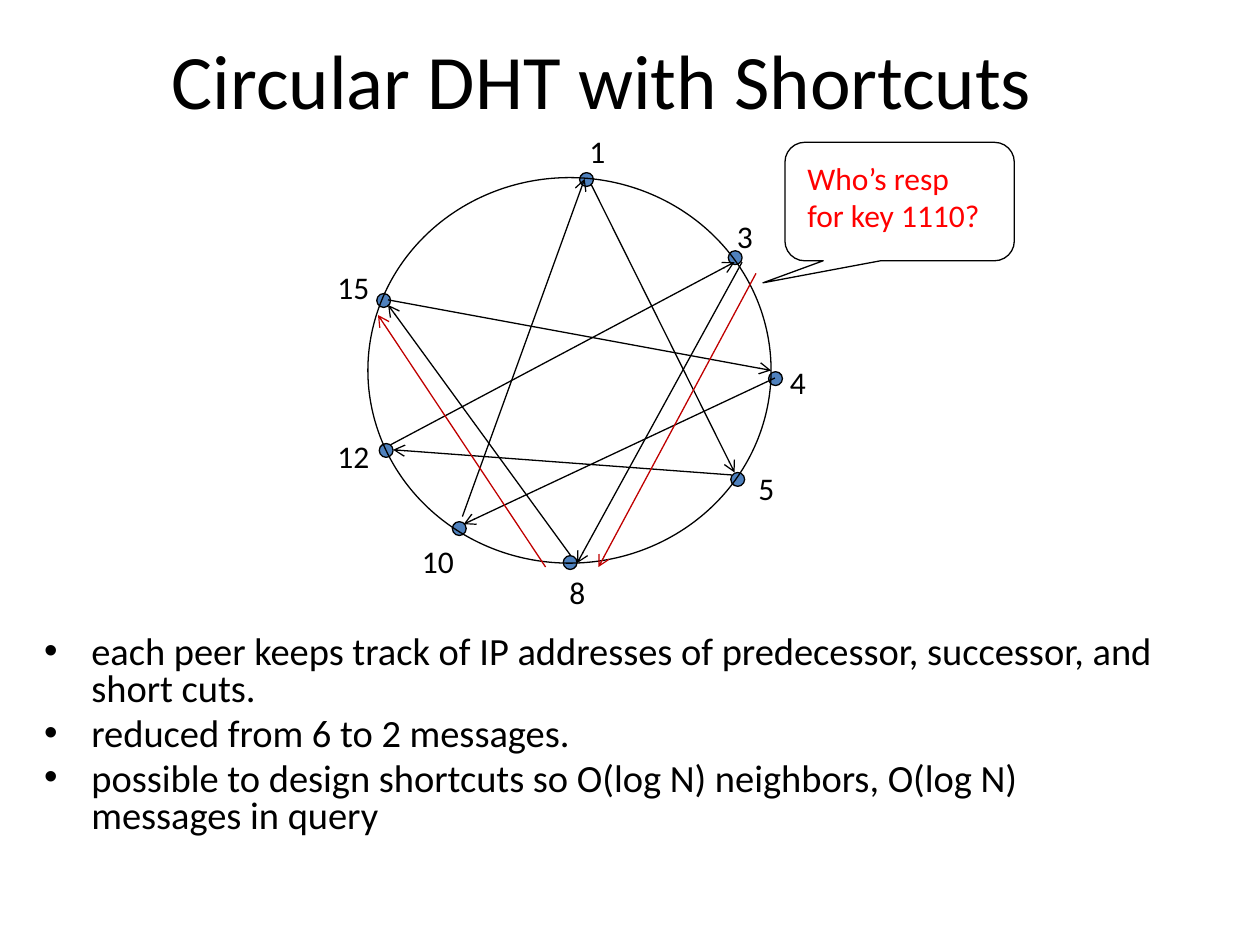
from dataclasses import dataclass

from lxml import etree
from pptx import Presentation
from pptx.dml.color import RGBColor
from pptx.enum.shapes import MSO_CONNECTOR, MSO_SHAPE
from pptx.enum.text import MSO_ANCHOR, MSO_AUTO_SIZE, PP_ALIGN
from pptx.oxml.ns import qn
from pptx.slide import Slide
from pptx.util import Inches, Pt

OVAL = MSO_SHAPE.OVAL
CALLOUT = MSO_SHAPE.ROUNDED_RECTANGULAR_CALLOUT
STRAIGHT = MSO_CONNECTOR.STRAIGHT
BLACK, BLUE, RED, DARK_RED = "000000", "4F81BD", "FF0000", "C00000"
DOT = 0.11

# peer: (dot left, dot top, label left, label top, label width)
PEERS = {
    "1": (4.6, 1.37, 4.58, 1, 0.32),
    "3": (5.78, 1.99, 5.75, 1.67, 0.36),
    "4": (6.1, 2.95, 6.17, 2.83, 0.36),
    "5": (5.8, 3.75, 5.92, 3.67, 0.36),
    "8": (4.47, 4.41, 4.42, 4.5, 0.36),
    "10": (3.59, 4.14, 3.25, 4.25, 0.47),
    "12": (3.01, 3.52, 2.58, 3.42, 0.47),
    "15": (2.99, 2.33, 2.58, 2.08, 0.47),
}
SHORTCUTS = [
    (6.15, 3, 3.68, 4.16),
    (5.81, 3.77, 3.12, 3.57),
    (4.53, 4.41, 3.08, 2.42),
    (3.67, 4.1, 4.64, 1.42),
    (3.1, 3.53, 5.83, 2.08),
    (3.08, 2.38, 6.12, 2.94),
    (4.69, 1.46, 5.83, 3.75),
    (5.89, 2.08, 4.58, 4.47),
]
QUERY_HOPS = [(6, 2.17, 4.75, 4.5), (4.33, 4.5, 3, 2.5)]
BULLETS = [
    "each peer keeps track of IP addresses of predecessor, successor, and short cuts.",
    "reduced from 6 to 2 messages.",
    "possible to design shortcuts so O(log N) neighbors, O(log N) messages in query",
]


def rgb(value):
    return RGBColor.from_string(value)


def inches(box):
    return [Inches(v) for v in box]


@dataclass
class Canvas:
    s: Slide
    font: str = "Calibri"
    line_width: float = 0.75

    def style(self, p, size, color):
        for r in p.runs:
            r.font.name, r.font.size = self.font, Pt(size)
            r.font.color.rgb = rgb(color)

    def placeholder(self, sp, box, text, size):
        sp.left, sp.top, sp.width, sp.height = inches(box)
        tf = sp.text_frame
        tf.text = text
        tf.auto_size = MSO_AUTO_SIZE.NONE
        for p in tf.paragraphs:
            self.style(p, size, BLACK)
        return tf

    def title(self, text, box):
        tf = self.placeholder(self.s.shapes.title, box, text, 44)
        tf.vertical_anchor = MSO_ANCHOR.MIDDLE
        tf.paragraphs[0].alignment = PP_ALIGN.CENTER

    def bullets(self, items, box):
        tf = self.placeholder(self.s.placeholders[1], box, "\n".join(items), 22)
        for p in tf.paragraphs:
            p.line_spacing = 0.8

    def shape(self, kind, box, fill=None):
        sp = self.s.shapes.add_shape(kind, *inches(box))
        sp.shadow.inherit = False
        if fill:
            sp.fill.solid()
            sp.fill.fore_color.rgb = rgb(fill)
        else:
            sp.fill.background()
        sp.line.color.rgb = rgb(BLACK)
        sp.line.width = Pt(self.line_width)
        return sp

    def text(self, text, box, color=BLACK, wrap=False):
        tf = self.s.shapes.add_textbox(*inches(box)).text_frame
        tf.word_wrap = wrap
        tf.auto_size = MSO_AUTO_SIZE.SHAPE_TO_FIT_TEXT
        tf.text = text
        for p in tf.paragraphs:
            self.style(p, 18, color)

    def arrow(self, ends, color=BLACK):
        c = self.s.shapes.add_connector(STRAIGHT, *inches(ends))
        c.line.color.rgb = rgb(color)
        c.line.width = Pt(self.line_width)
        ln = c.line._get_or_add_ln()
        etree.SubElement(ln, qn("a:tailEnd"), type="arrow")
        etree.SubElement(c._element.spPr, qn("a:effectLst"))


def main():
    prs = Presentation()
    prs.slide_width, prs.slide_height = Inches(10), Inches(7.5)
    canvas = Canvas(prs.slides.add_slide(prs.slide_layouts[1]))

    canvas.title("Circular DHT with Shortcuts", (0.28, 0, 9, 1.25))
    canvas.bullets(BULLETS, (0.25, 5, 9, 1.83))

    for x, y, *_ in PEERS.values():
        canvas.shape(OVAL, (x, y, DOT, DOT), BLUE)
    canvas.shape(OVAL, (2.92, 1.41, 3.2, 3.06))
    for name, (_, _, x, y, width) in PEERS.items():
        canvas.text(name, (x, y, width, 0.4))

    for ends in SHORTCUTS:
        canvas.arrow(ends)
    for ends in QUERY_HOPS:
        canvas.arrow(ends, DARK_RED)

    callout = canvas.shape(CALLOUT, (6.23, 1.13, 1.82, 0.94))
    for i, value in enumerate((-0.596, 0.686, 0.167)):
        callout.adjustments[i] = value
    canvas.text("Who’s resp\nfor key 1110?", (6.31, 1.21, 1.8, 0.77), RED, wrap=True)

    prs.save("out.pptx")


if __name__ == "__main__":
    main()
